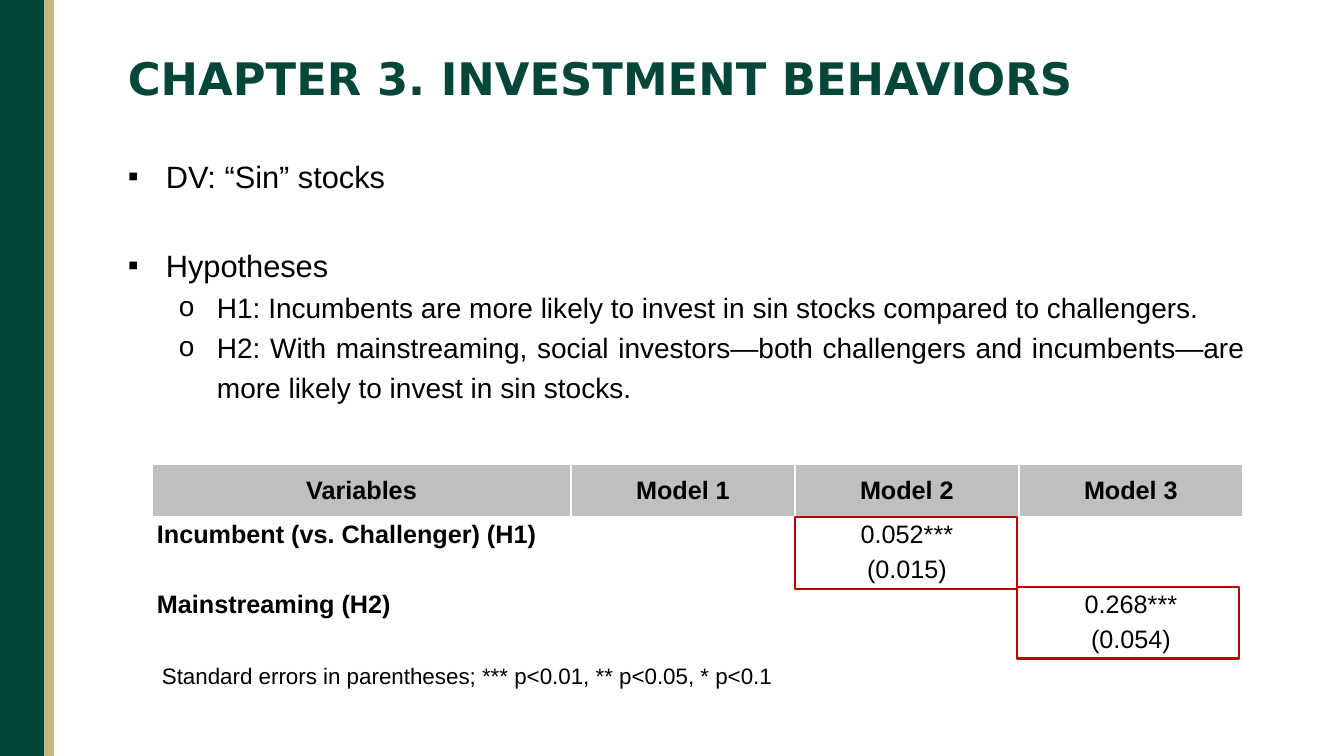
from dataclasses import dataclass

import pptx
import pptx.dml.color
import pptx.enum.shapes
import pptx.enum.text
import pptx.oxml.ns
import pptx.util
from lxml import etree

SCALE = 914400 / 100.8  # EMU in one px
ALIGN = pptx.enum.text.PP_ALIGN
MIDDLE = pptx.enum.text.MSO_ANCHOR.MIDDLE
FIT = pptx.enum.text.MSO_AUTO_SIZE.SHAPE_TO_FIT_TEXT


@dataclass(frozen=True)
class Theme:
    green: str = "04463A"
    gold: str = "C5B783"
    gray: str = "BFBFBF"
    red: str = "C00000"
    black: str = "000000"
    white: str = "FFFFFF"
    head: str = "DejaVu Sans"
    body: str = "Arial"
    title: int = 32
    item: int = 22
    sub: int = 20
    cell: int = 18
    note: int = 16


THEME = Theme()


def px(count):
    return pptx.util.Emu(round(count * SCALE))


def color(code):
    return pptx.dml.color.RGBColor.from_string(code)


def child(parent, tag, **attrs):
    return etree.SubElement(parent, pptx.oxml.ns.qn(tag), **attrs)


def add_run(para, text, size, bold=False, face=THEME.body, tint=THEME.black):
    run = para.add_run()
    run.text = text
    run.font.size = pptx.util.Pt(size)
    run.font.bold = bold
    run.font.name = face
    run.font.color.rgb = color(tint)


def add_box(slide, left, top, width, height):
    box = slide.shapes.add_textbox(px(left), px(top), px(width), px(height))
    box.text_frame.word_wrap = True
    return box.text_frame


def add_rect(slide, left, top, width, height, fill=None, line=None):
    kind = pptx.enum.shapes.MSO_SHAPE.RECTANGLE
    rect = slide.shapes.add_shape(kind, px(left), px(top), px(width), px(height))
    rect.shadow.inherit = False
    if fill:
        rect.fill.solid()
        rect.fill.fore_color.rgb = color(fill)
    else:
        rect.fill.background()
    if line:
        rect.line.color.rgb = color(line)
        rect.line.width = pptx.util.Pt(2)
    else:
        rect.line.fill.background()


def add_list(slide, items, left, top, width, height):
    frame = add_box(slide, left, top, width, height)
    frame.auto_size = FIT
    for index, (level, gap, text) in enumerate(items):
        para = frame.add_paragraph() if index else frame.paragraphs[0]
        para.level = level
        para.alignment = ALIGN.JUSTIFY
        para.line_spacing = 1.2
        para.space_before = pptx.util.Pt(gap)
        props = para._p.get_or_add_pPr()
        props.set("marL", str(px(89 if level else 38)))
        props.set("indent", str(px(-38)))
        child(props, "a:buFont", typeface=THEME.body)
        child(props, "a:buChar", char="o" if level else "▪")
        add_run(para, text, THEME.sub if level else THEME.item)


def add_edges(cell):
    props = cell._tc.get_or_add_tcPr()
    for spot, side in enumerate("LRTB"):
        edge = child(props, "a:ln" + side, w=str(pptx.util.Pt(1)))
        fill = child(edge, "a:solidFill")
        child(fill, "a:srgbClr", val=THEME.white)
        props.insert(spot, edge)


def add_grid(slide, rows, left, top, widths, heights):
    frame = slide.shapes.add_table(len(rows), len(widths), px(left), px(top),
                                   px(sum(widths)), px(sum(heights)))
    grid = frame.table
    grid.first_row = grid.horz_banding = False
    for col, width in zip(grid.columns, widths):
        col.width = px(width)
    for row, height in zip(grid.rows, heights):
        row.height = px(height)
    for r, texts in enumerate(rows):
        for c, text in enumerate(texts):
            cell = grid.cell(r, c)
            cell.margin_left = cell.margin_right = px(5)
            cell.margin_top = cell.margin_bottom = 0
            cell.vertical_anchor = MIDDLE
            if r == 0:
                cell.fill.solid()
                cell.fill.fore_color.rgb = color(THEME.gray)
            else:
                cell.fill.background()
            add_edges(cell)
            para = cell.text_frame.paragraphs[0]
            para.font.size = pptx.util.Pt(THEME.cell)
            para.alignment = ALIGN.LEFT if r and c == 0 else ALIGN.CENTER
            if text:
                add_run(para, text, THEME.cell, bold=r == 0 or c == 0)


def main():
    deck = pptx.Presentation()
    deck.slide_width, deck.slide_height = px(1344), px(756)
    slide = deck.slides.add_slide(deck.slide_layouts[6])

    # Side bands
    add_rect(slide, 44, 0, 10, 756, fill=THEME.gold)
    add_rect(slide, 0, 0, 44, 756, fill=THEME.green)

    # Title
    frame = add_box(slide, 118, 48, 1182, 65)
    frame.vertical_anchor = MIDDLE
    para = frame.paragraphs[0]
    para.line_spacing = 0.9
    add_run(para, "CHAPTER 3. INVESTMENT BEHAVIORS", THEME.title, True,
            THEME.head, THEME.green)

    # Hypotheses: level, space before in points, text
    items = [
        (0, 0, "DV: “Sin” stocks"),
        (0, 32, "Hypotheses"),
        (1, 0, "H1: Incumbents are more likely to invest in sin stocks "
               "compared to challengers."),
        (1, 0, "H2: With mainstreaming, social investors—both challengers "
               "and incumbents—are more likely to invest in sin stocks."),
    ]
    add_list(slide, items, 118, 145, 1137, 263)

    # Results table
    rows = [
        ("Variables", "Model 1", "Model 2", "Model 3"),
        ("Incumbent (vs. Challenger) (H1)", "", "0.052***", ""),
        ("", "", "(0.015)", ""),
        ("Mainstreaming (H2)", "", "", "0.268***"),
        ("", "", "", "(0.054)"),
    ]
    add_grid(slide, rows, 152, 464, [419] + [224] * 3, [53] + [35] * 4)

    # Frames around the key results
    for step in range(2):
        add_rect(slide, 795 + 222 * step, 517 + 70 * step, 222, 72,
                 line=THEME.red)

    # Table note
    frame = add_box(slide, 152, 657, 672, 37)
    frame.auto_size = FIT
    add_run(frame.paragraphs[0],
            "Standard errors in parentheses; *** p<0.01, ** p<0.05, * p<0.1",
            THEME.note)

    deck.save("out.pptx")


if __name__ == "__main__":
    main()
